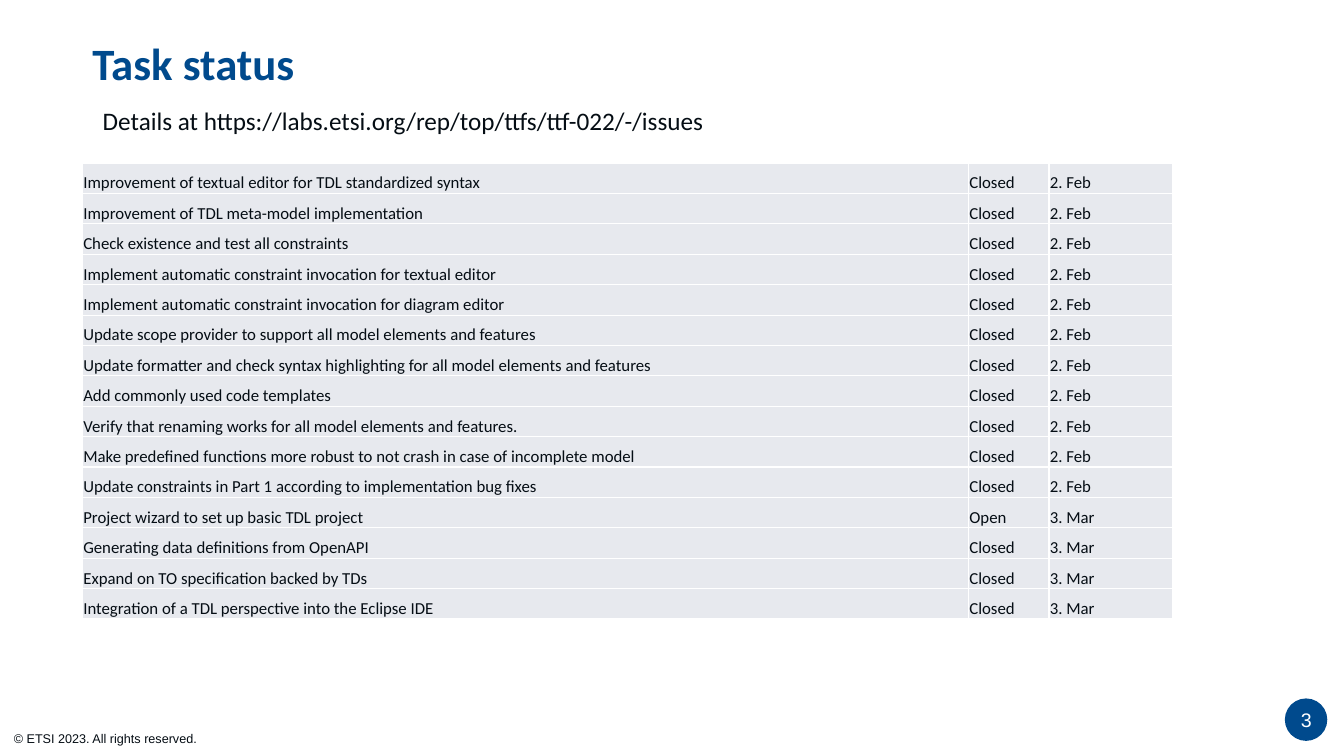
import pptx
import pptx.dml.color
import pptx.enum.shapes
import pptx.enum.text
import pptx.oxml
import pptx.oxml.ns
import pptx.util

Cm = pptx.util.Cm
Pt = pptx.util.Pt
RGBColor = pptx.dml.color.RGBColor
ANCHOR = pptx.enum.text.MSO_ANCHOR
ALIGN = pptx.enum.text.PP_ALIGN

BLUE = RGBColor(0x00, 0x4A, 0x8D)
INK = RGBColor(0x05, 0x0D, 0x14)
WHITE = RGBColor(0xFF, 0xFF, 0xFF)
ROW_GREY = RGBColor(0xE7, 0xE9, 0xEE)

FEBRUARY, MARCH = "2. Feb", "3. Mar"
TASKS = [
    ("Improvement of textual editor for TDL standardized syntax", "Closed", FEBRUARY),
    ("Improvement of TDL meta-model implementation", "Closed", FEBRUARY),
    ("Check existence and test all constraints", "Closed", FEBRUARY),
    ("Implement automatic constraint invocation for textual editor", "Closed", FEBRUARY),
    ("Implement automatic constraint invocation for diagram editor", "Closed", FEBRUARY),
    ("Update scope provider to support all model elements and features", "Closed", FEBRUARY),
    ("Update formatter and check syntax highlighting for all model elements and features",
     "Closed", FEBRUARY),
    ("Add commonly used code templates", "Closed", FEBRUARY),
    ("Verify that renaming works for all model elements and features.", "Closed", FEBRUARY),
    ("Make predefined functions more robust to not crash in case of incomplete model",
     "Closed", FEBRUARY),
    ("Update constraints in Part 1 according to implementation bug fixes", "Closed", FEBRUARY),
    ("Project wizard to set up basic TDL project", "Open", MARCH),
    ("Generating data definitions from OpenAPI", "Closed", MARCH),
    ("Expand on TO specification backed by TDs", "Closed", MARCH),
    ("Integration of a TDL perspective into the Eclipse IDE", "Closed", MARCH),
]


class StatusSlide:
    body_font = "Calibri"
    footer_font = "Arial"

    def __init__(self, presentation):
        self.slide = presentation.slides.add_slide(presentation.slide_layouts[6])

    def style(self, paragraph, size, color, font, bold=False):
        for run in paragraph.runs:
            run.font.size = Pt(size)
            run.font.name = font
            run.font.bold = bold
            run.font.color.rgb = color

    def text(self, words, left, top, width, height, size, color=INK, font=body_font,
             bold=False, wrap=True, align=ALIGN.LEFT, anchor=ANCHOR.TOP, spacing=None):
        box = self.slide.shapes.add_textbox(Cm(left), Cm(top), Cm(width), Cm(height))
        frame = box.text_frame
        frame.word_wrap = wrap
        frame.vertical_anchor = anchor
        frame.text = words
        paragraph = frame.paragraphs[0]
        paragraph.alignment = align
        paragraph.line_spacing = spacing
        self.style(paragraph, size, color, font, bold)

    def disc(self, left, top, diameter, color):
        disc = self.slide.shapes.add_shape(
            pptx.enum.shapes.MSO_SHAPE.OVAL, Cm(left), Cm(top), Cm(diameter), Cm(diameter))
        disc.shadow.inherit = False
        disc.fill.solid()
        disc.fill.fore_color.rgb = color
        disc.line.fill.background()

    def borders(self, cell, color, width):
        properties = cell._tc.get_or_add_tcPr()
        for side in ("lnL", "lnR", "lnT", "lnB"):
            properties.append(pptx.oxml.parse_xml(
                f'<a:{side} {pptx.oxml.ns.nsdecls("a")} w="{Pt(width)}"><a:solidFill>'
                f'<a:srgbClr val="{color}"/></a:solidFill></a:{side}>'))

    def table(self, rows, left, top, height, widths, size):
        table = self.slide.shapes.add_table(
            len(rows), len(widths), Cm(left), Cm(top), Cm(sum(widths)), Cm(height)).table
        table.first_row = False
        table.horz_banding = False
        for column, width in zip(table.columns, widths):
            column.width = Cm(width)
        for r, row in enumerate(rows):
            for c, words in enumerate(row):
                cell = table.cell(r, c)
                self.borders(cell, WHITE, 1)
                cell.fill.solid()
                cell.fill.fore_color.rgb = ROW_GREY
                cell.margin_left = cell.margin_right = cell.margin_top = Cm(0.02)
                cell.margin_bottom = 0
                cell.vertical_anchor = ANCHOR.BOTTOM
                cell.text_frame.text = words
                self.style(cell.text_frame.paragraphs[0], size, INK, self.body_font)


def main():
    presentation = pptx.Presentation()
    presentation.slide_width = Cm(33.87)
    presentation.slide_height = Cm(19.05)
    status = StatusSlide(presentation)

    # Footer: copyright line and page number
    status.text("© ETSI 2023. All rights reserved.", 0.1, 18.29, 5.18, 0.64, 9,
                font=status.footer_font, wrap=False)
    status.disc(32.38, 17.6, 1.07, BLUE)
    status.text("3", 32.08, 17.6, 1.68, 1.07, 14, WHITE, status.footer_font,
                align=ALIGN.CENTER, anchor=ANCHOR.MIDDLE)

    # Heading
    status.text("Task status", 2.08, 0.94, 18.06, 3.18, 32, BLUE, bold=True, spacing=0.9)

    # Task list: task, state, date
    status.table(TASKS, 2.08, 4.11, 11.5, (22.33, 2.03, 3.12), 12)

    # Link to the issues
    status.text("Details at https://labs.etsi.org/rep/top/ttfs/ttf-022/-/issues",
                2.34, 2.54, 16.92, 1.02, 18)

    presentation.save("out.pptx")


if __name__ == "__main__":
    main()
